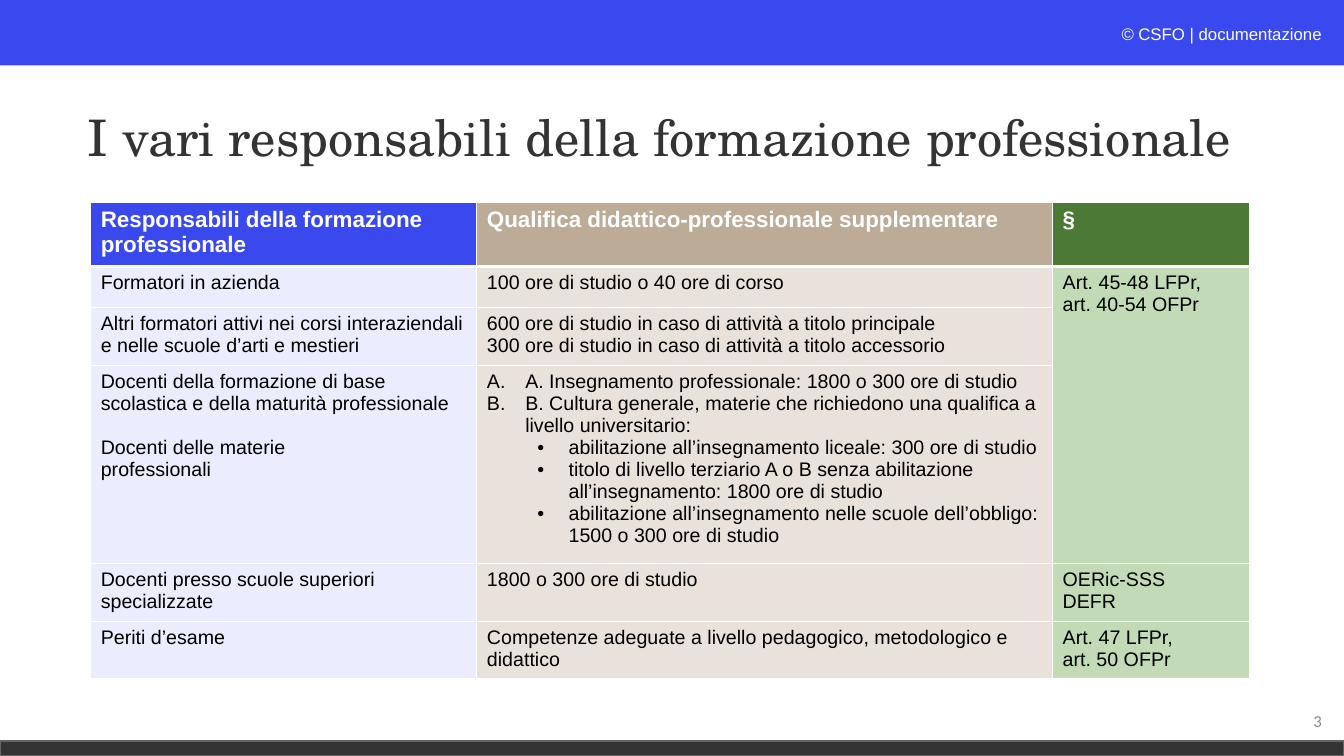
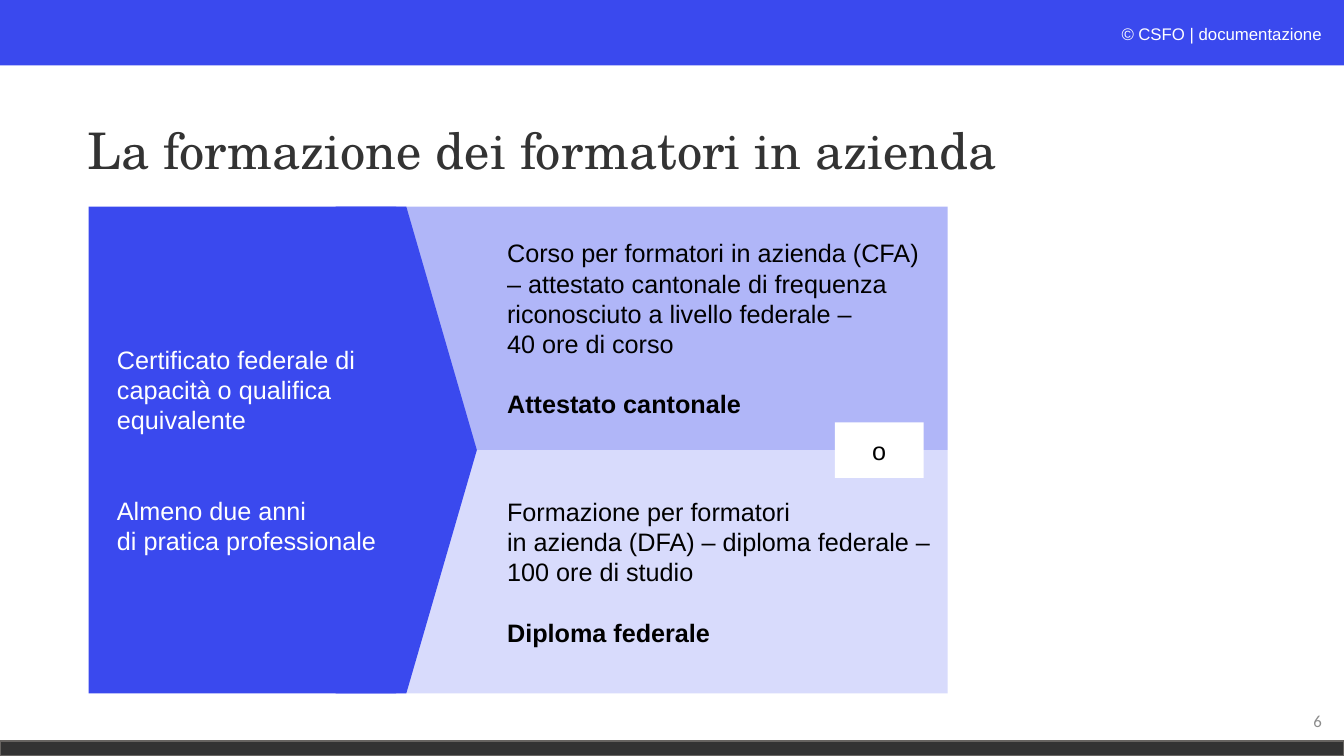
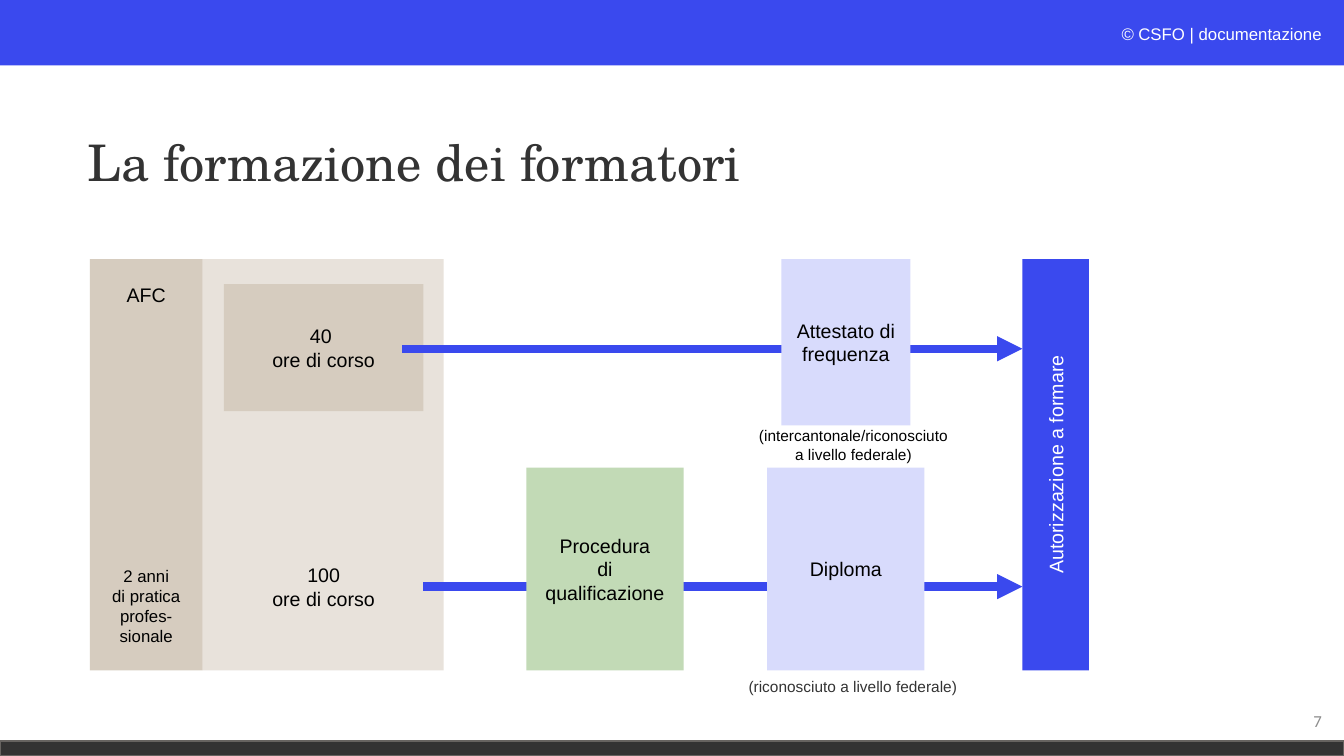
from lxml import etree
from pptx import Presentation
from pptx.dml.color import RGBColor
from pptx.enum.shapes import MSO_CONNECTOR, MSO_SHAPE
from pptx.enum.text import MSO_ANCHOR, PP_ALIGN
from pptx.oxml.ns import qn
from pptx.util import Inches, Pt

RECT, PENTAGON = MSO_SHAPE.RECTANGLE, MSO_SHAPE.PENTAGON
STRAIGHT = MSO_CONNECTOR.STRAIGHT
TOP, MIDDLE = MSO_ANCHOR.TOP, MSO_ANCHOR.MIDDLE
LEFT, CENTER, RIGHT = PP_ALIGN.LEFT, PP_ALIGN.CENTER, PP_ALIGN.RIGHT

COLORS = {
    "blue": "3A49EE", "blue_mid": "B0B6F8", "blue_light": "D8DBFC", "blue_pale": "EBECFE",
    "tan": "BCAB96", "tan_mid": "D6CCBF", "tan_light": "E8E2DB",
    "green": "4C7936", "green_light": "C2DAB6",
    "dark": "333333", "dark_edge": "666360", "grey": "8C8C8C",
    "white": "FFFFFF", "off_white": "FCFDFE", "black": "000000",
}
BODY_FONT, TITLE_FONT, NUMBER_FONT = "Arial", "TeX Gyre Schola", "Calibri"
SLIDE_W, SLIDE_H = 13.33, 7.5
BLANK_LINE = {14: 15.8, 18: 21.6}  # height in points of one skipped line

LETTERED = {"indent": (0.38, -0.38), "bullet": "auto"}
DOTTED = {"indent": (0.81, -0.31), "bullet": "•", "level": 1}

TABLE_COLUMNS = [(3.83, "blue", "blue_pale"), (5.71, "tan", "tan_light"),
                 (1.95, "green", "green_light")]
TABLE_ROW_HEIGHTS = [0.62, 0.41, 0.57, 1.97, 0.57, 0.57]
TABLE_ROWS = [
    [["Responsabili della formazione", "professionale"],
     ["Qualifica didattico-professionale supplementare"], ["§"]],
    [["Formatori in azienda"], ["100 ore di studio o 40 ore di corso"],
     ["Art. 45-48 LFPr,", "art. 40-54 OFPr"]],
    [["Altri formatori attivi nei corsi interaziendali e nelle scuole d’arti e mestieri"],
     ["600 ore di studio in caso di attività a titolo principale",
      "300 ore di studio in caso di attività a titolo accessorio"], []],
    [["Docenti della formazione di base scolastica e della maturità professionale",
      ("Docenti delle materie", {"before": BLANK_LINE[14]}), "professionali"],
     [("A. Insegnamento professionale: 1800 o 300 ore di studio", LETTERED),
      ("B. Cultura generale, materie che richiedono una qualifica a livello universitario:",
       LETTERED),
      ("abilitazione all’insegnamento liceale: 300 ore di studio", DOTTED),
      ("titolo di livello terziario A o B senza abilitazione all’insegnamento: "
       "1800 ore di studio", DOTTED),
      ("abilitazione all’insegnamento nelle scuole dell’obbligo: 1500 o 300 ore di studio",
       DOTTED)], []],
    [["Docenti presso scuole superiori specializzate"], ["1800 o 300 ore di studio"],
     ["OERic-SSS", "DEFR"]],
    [["Periti d’esame"],
     ["Competenze adeguate a livello pedagogico, metodologico e didattico"],
     ["Art. 47 LFPr,", "art. 50 OFPr"]],
]


def rgb(name):
    return RGBColor.from_string(COLORS[name])


def inches(*lengths):
    return [Inches(length) for length in lengths]


def add_run(paragraph, text, size=14, color="black", bold=False, italic=False, font=BODY_FONT):
    run = paragraph.add_run()
    run.text = text
    run.font.size, run.font.name = Pt(size), font
    run.font.bold, run.font.italic = bold, italic
    run.font.color.rgb = rgb(color)


def set_bullet(paragraph, bullet, indent):
    """Add a dot, or letters counted automatically, with a hanging indent."""
    props = paragraph._p.get_or_add_pPr()
    props.set("marL", str(Inches(indent[0])))
    props.set("indent", str(Inches(indent[1])))
    if bullet == "auto":
        etree.SubElement(props, qn("a:buAutoNum"), type="alphaUcPeriod")
    else:
        etree.SubElement(props, qn("a:buFont"), typeface=BODY_FONT)
        etree.SubElement(props, qn("a:buChar"), char=bullet)


def write(frame, paragraphs, **shared):
    """Fill a frame; an item is a text or a (text, format) pair that overrides the shared format."""
    for index, item in enumerate(paragraphs):
        text, own = (item, {}) if isinstance(item, str) else item
        style = {**shared, **own}
        paragraph = frame.paragraphs[0] if index == 0 else frame.add_paragraph()
        paragraph.alignment = style.pop("align", LEFT)
        paragraph.level = style.pop("level", 0)
        bullet, indent = style.pop("bullet", None), style.pop("indent", None)
        if bullet:
            set_bullet(paragraph, bullet, indent)
        before, spacing = style.pop("before", None), style.pop("spacing", None)
        if before:
            paragraph.space_before = Pt(before)
        if spacing:
            paragraph.line_spacing = spacing
        add_run(paragraph, text, **style)


def add_box(slide, box, fill, paragraphs=(), kind=RECT, edge=None, inset=0.1, **style):
    shape = slide.shapes.add_shape(kind, *inches(*box))
    shape.shadow.inherit = False
    shape.fill.solid()
    shape.fill.fore_color.rgb = rgb(fill)
    if edge:
        shape.line.color.rgb, shape.line.width = rgb(edge), Pt(1)
    else:
        shape.line.fill.background()
    frame = shape.text_frame
    frame.word_wrap, frame.vertical_anchor = True, MIDDLE
    frame.margin_left = Inches(inset)
    write(frame, paragraphs, **style)
    return shape


def add_label(slide, box, paragraphs, anchor=TOP, wrap=True, **style):
    frame = slide.shapes.add_textbox(*inches(*box)).text_frame
    frame.word_wrap, frame.vertical_anchor = wrap, anchor
    write(frame, paragraphs, **style)
    return frame


def add_arrow(slide, start, end, source=None):
    """Draw a thick arrow, joined to the right side of the source if there is one."""
    arrow = slide.shapes.add_connector(STRAIGHT, *inches(*start, *end))
    if source is not None:
        arrow.begin_connect(source, 3)
    arrow.line.color.rgb, arrow.line.width = rgb("blue"), Pt(6)
    etree.SubElement(arrow.line._get_or_add_ln(), qn("a:tailEnd"), type="triangle")
    etree.SubElement(arrow._element.spPr, qn("a:effectLst"))


def new_slide(deck, title, number, title_top, title_width=11.5):
    """Add a slide with its bands, copyright line, title and page number."""
    slide = deck.slides.add_slide(deck.slide_layouts[5])
    add_box(slide, (0, 0, SLIDE_W, 0.65), "blue")
    add_box(slide, (0, 7.35, SLIDE_W, 0.15), "dark", edge="dark_edge")
    credit = add_label(slide, (8.62, 0.19, 4.59, 0.3), ["© "], size=12, italic=True,
                       color="off_white", align=RIGHT)
    add_run(credit.paragraphs[0], "CSFO | documentazione", size=12, color="white")
    add_label(slide, (10.21, 6.95, 3, 0.4), [str(number)], anchor=MIDDLE, size=12,
              color="grey", font=NUMBER_FONT, align=RIGHT)
    heading = slide.shapes.title
    heading.left, heading.top, heading.width, heading.height = inches(
        0.77, title_top, title_width, 1.45)
    heading.text_frame.vertical_anchor = MIDDLE
    write(heading.text_frame, [title], size=36, color="dark", font=TITLE_FONT, spacing=0.9)
    return slide


def set_borders(cell, bottom):
    """Give a cell white borders, 1 pt wide except for the bottom one."""
    props = cell._tc.get_or_add_tcPr()
    for index, (side, width) in enumerate([("L", 1), ("R", 1), ("T", 1), ("B", bottom)]):
        line = etree.Element(qn(f"a:ln{side}"), w=str(Pt(width)))
        fill = etree.SubElement(line, qn("a:solidFill"))
        etree.SubElement(fill, qn("a:srgbClr"), val=COLORS["white"])
        props.insert(index, line)


def add_qualification_table(slide, left, top):
    width = sum(column[0] for column in TABLE_COLUMNS)
    table = slide.shapes.add_table(
        len(TABLE_ROWS), len(TABLE_COLUMNS),
        *inches(left, top, width, sum(TABLE_ROW_HEIGHTS))).table
    table.first_row = table.horz_banding = False
    for row, height in zip(table.rows, TABLE_ROW_HEIGHTS):
        row.height = Inches(height)
    for c, (column_width, head_fill, body_fill) in enumerate(TABLE_COLUMNS):
        table.columns[c].width = Inches(column_width)
        for r, texts in enumerate(TABLE_ROWS):
            cell, is_head = table.cell(r, c), r == 0
            cell.fill.solid()
            cell.fill.fore_color.rgb = rgb(head_fill if is_head else body_fill)
            set_borders(cell, 3 if is_head else 1)
            write(cell.text_frame, texts[c], size=16 if is_head else 14, bold=is_head,
                  color="white" if is_head else "black")
    table.cell(1, 2).merge(table.cell(3, 2))


def add_training_paths(slide, left, top):
    """Show the entry requirements pointing at the two alternative trainings."""
    height, entry_width, path_width = 4.83, 3.05, 5.47
    path_height, path_left = height / 2, left + entry_width
    gap = BLANK_LINE[18]
    paths = [
        ("blue_mid", ["Corso per formatori in azienda (CFA)",
                      "– attestato cantonale di frequenza",
                      "riconosciuto a livello federale –", "40 ore di corso"],
         "Attestato cantonale"),
        ("blue_light", ["Formazione per formatori",
                        "in azienda (DFA) – diploma federale –", "100 ore di studio"],
         "Diploma federale"),
    ]
    for index, (fill, course, award) in enumerate(paths):
        add_box(slide, (path_left, top + index * path_height, path_width, path_height), fill,
                course + [(award, {"bold": True, "before": gap})], inset=1.1, size=18)
    add_box(slide, (left + 2.45, top, 1.4, height), "blue", kind=PENTAGON)
    add_box(slide, (left, top, entry_width, height), "blue",
            ["Certificato federale di", "capacità o qualifica", "equivalente",
             ("Almeno due anni", {"before": 2 * gap}), "di pratica professionale"],
            inset=0.28, size=18, color="white")
    add_box(slide, (left + 7.4, top + 2.14, 0.88, 0.55), "white", ["o"], size=18, align=CENTER)


def add_training_flow(slide, left, top):
    """Show both courses leading to the authorisation to train."""
    height, target_x = 4.08, left + 9.25
    upper_y, lower_top = top + 0.89, top + 2.07

    def block(x, y, w, h, fill, *texts, **style):
        return add_box(slide, (left + x, top + y, w, h), fill, texts, align=CENTER, **style)

    block(1.12, 0, 2.39, height, "tan_light")
    block(1.33, 0.25, 1.98, 1.26, "tan_mid", "40 ", "ore di corso")
    long_course = block(1.33, 2.62, 1.98, 1.26, "tan_light", "100", "ore di corso")
    add_arrow(slide, (left + 3.31, top + 3.25), (target_x, top + 3.25), long_course)
    add_arrow(slide, (left + 3.1, upper_y), (target_x, upper_y))
    block(0, 0, 1.12, height, "tan_mid", "AFC", ("2 anni", {"size": 12, "before": 185}),
          ("di pratica", {"size": 12}), ("profes-sionale", {"size": 12}))
    step_y, step_height = lower_top - top, 2.01
    block(4.33, step_y, 1.56, step_height, "green_light", "Procedura", "di qualificazione")
    block(6.72, step_y, 1.56, step_height, "blue_light", "Diploma")
    block(6.86, 0, 1.28, 1.65, "blue_light", "Attestato di", "frequenza")
    target = block(9.25, 0, 0.66, height, "blue", "Autorizzazione a formare", color="white")
    target.text_frame._txBody.bodyPr.set("vert", "vert270")
    add_label(slide, (left + 6.38, top + 1.61, 2.39, 0.47),
              ["(intercantonale/riconosciuto", "a livello federale)"], size=11, align=CENTER)
    add_label(slide, (left + 6.42, top + 4.1, 2.3, 0.29), ["(riconosciuto a livello federale)"],
              wrap=False, size=11, color="dark", align=CENTER)


def main():
    deck = Presentation()
    deck.slide_width, deck.slide_height = inches(SLIDE_W, SLIDE_H)
    slide = new_slide(deck, "I vari responsabili della formazione professionale", 3, 0.67, 11.63)
    add_qualification_table(slide, 0.9, 2.01)
    slide = new_slide(deck, "La formazione dei formatori in azienda", 6, 0.79)
    add_training_paths(slide, 0.88, 2.05)
    slide = new_slide(deck, "La formazione dei formatori", 7, 0.91)
    add_training_flow(slide, 0.89, 2.57)
    deck.save("out.pptx")


if __name__ == "__main__":
    main()
